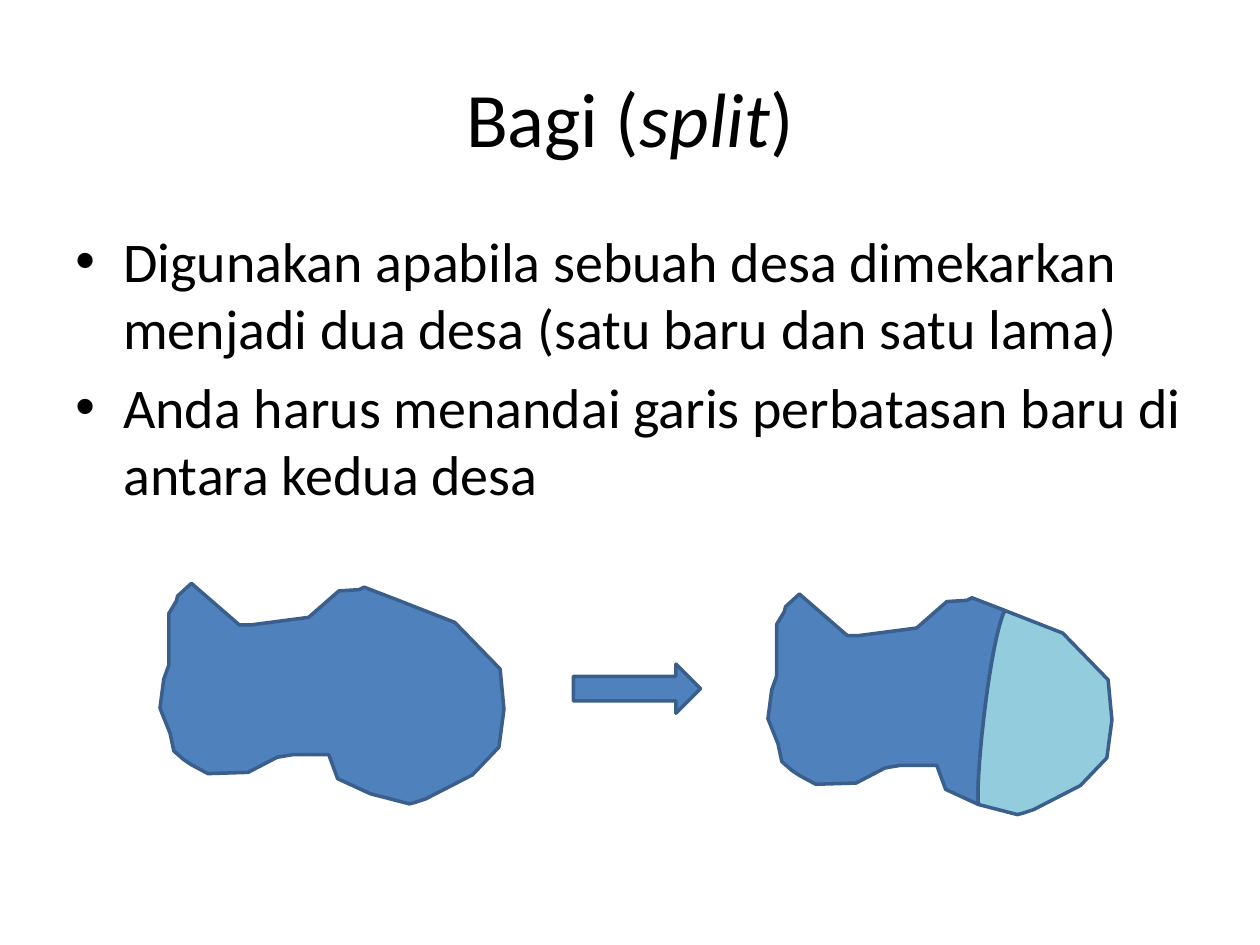
from typing import NamedTuple

from lxml import etree
from pptx import Presentation
from pptx.dml.color import RGBColor
from pptx.enum.shapes import MSO_SHAPE
from pptx.enum.text import MSO_ANCHOR, PP_ALIGN
from pptx.oxml.ns import qn
from pptx.util import Inches, Pt

RIGHT_ARROW = MSO_SHAPE.RIGHT_ARROW
MIDDLE, TOP = MSO_ANCHOR.MIDDLE, MSO_ANCHOR.TOP
CENTER, LEFT = PP_ALIGN.CENTER, PP_ALIGN.LEFT

SLIDE_WIDTH, SLIDE_HEIGHT = Inches(10), Inches(7.5)
COLUMNS, ROWS = 100, 75
FONT = "Calibri"
BLACK, BLUE, TEAL, OUTLINE = "000000", "4F81BD", "93CDDD", "3A5F8C"


class Point(NamedTuple):
    col: float
    row: float


class Frame(NamedTuple):
    col: float
    row: float
    cols: float
    rows: float


class Phrase(NamedTuple):
    text: str
    italic: bool = False


class Line(NamedTuple):
    phrases: list[Phrase]
    size: float
    align: PP_ALIGN = LEFT
    bullet: bool = False


TITLE_FRAME = Frame(5, 3, 90, 12.5)
BODY_FRAME = Frame(5, 17.5, 90, 49.5)
ARROW_FRAME = Frame(45.5, 52.7, 10.1, 3.9)

TITLE = [Line([Phrase("Bagi ("), Phrase("split", True), Phrase(")")], 44, CENTER)]
BODY = [
    Line([Phrase(text)], 32, bullet=True)
    for text in (
        "Digunakan apabila sebuah desa dimekarkan menjadi dua desa "
        "(satu baru dan satu lama)",
        "Anda harus menandai garis perbatasan baru di antara kedua desa",
    )
]

# Village outline, clockwise: west side from border foot to border head, then east side
WEST_SIDE = [Point(*p) for p in (
    (29.4, 63), (26.8, 61.8), (26.1, 59.9), (23.2, 59.9), (22, 60.1),
    (19.7, 61.3), (16.5, 61.4), (15.2, 60.7), (14.6, 60.3), (13.8, 59.6),
    (13.5, 58.2), (12.7, 56.2), (13, 53.9), (13.4, 52.8), (13.4, 48.7),
    (14, 47.7), (14.1, 47.3), (15.2, 46.3), (19, 49.6), (19.9, 49.6),
    (24.5, 49), (26.9, 46.9), (28.5, 46.8), (28.9, 46.6), (31.5, 47.6),
)]
EAST_SIDE = [Point(*p) for p in (
    (36.1, 49.4), (39.7, 53.1), (40, 56.3), (39.6, 59.3), (37.5, 61.5),
    (33.8, 63.4), (32.9, 63.7), (32.5, 63.8),
)]
BORDER_CONTROLS = (Point(30.4, 49.8), Point(29.2, 60.2))
SPLIT_SHIFT = Point(48.25, 0.85)


def x(cols: float) -> int:
    return round(SLIDE_WIDTH * cols / COLUMNS)


def y(rows: float) -> int:
    return round(SLIDE_HEIGHT * rows / ROWS)


def place(frame: Frame) -> tuple[int, int, int, int]:
    return x(frame.col), y(frame.row), x(frame.cols), y(frame.rows)


def color(hex_value: str) -> RGBColor:
    return RGBColor.from_string(hex_value)


def bezier(start: Point, first: Point, second: Point, end: Point,
           steps: int = 16) -> list[Point]:
    """Return points along a cubic curve, both ends included."""
    def blend(a: float, b: float, c: float, d: float, t: float) -> float:
        u = 1 - t
        return u**3 * a + 3 * u**2 * t * b + 3 * u * t**2 * c + t**3 * d

    return [
        Point(*(blend(*axis, i / steps) for axis in zip(start, first, second, end)))
        for i in range(steps + 1)
    ]


def paint(shape, fill: str) -> None:
    shape.shadow.inherit = False
    shape.fill.solid()
    shape.fill.fore_color.rgb = color(fill)
    shape.line.color.rgb = color(OUTLINE)
    shape.line.width = Pt(2)


def add_area(slide, points: list[Point], fill: str,
             shift: Point = Point(0, 0)) -> None:
    corners = [(x(p.col + shift.col), y(p.row + shift.row)) for p in points]
    builder = slide.shapes.build_freeform(*corners[0])
    builder.add_line_segments(corners[1:], close=True)
    paint(builder.convert_to_shape(), fill)


def add_bullet(paragraph) -> None:
    properties = paragraph._p.get_or_add_pPr()
    properties.set("marL", str(Inches(0.38)))
    properties.set("indent", str(-Inches(0.38)))
    etree.SubElement(properties, qn("a:buFont"), typeface="Arial")
    etree.SubElement(properties, qn("a:buChar"), char="•")


def add_text(slide, frame: Frame, lines: list[Line], anchor: MSO_ANCHOR) -> None:
    text_frame = slide.shapes.add_textbox(*place(frame)).text_frame
    text_frame.word_wrap = True
    text_frame.vertical_anchor = anchor
    for index, line in enumerate(lines):
        paragraph = text_frame.add_paragraph() if index else text_frame.paragraphs[0]
        paragraph.alignment = line.align
        if line.bullet:
            paragraph.space_before = Pt(line.size * 0.2)
            add_bullet(paragraph)
        for phrase in line.phrases:
            run = paragraph.add_run()
            run.text = phrase.text
            run.font.name = FONT
            run.font.size = Pt(line.size)
            run.font.italic = phrase.italic
            run.font.color.rgb = color(BLACK)


def main() -> None:
    presentation = Presentation()
    presentation.slide_width = SLIDE_WIDTH
    presentation.slide_height = SLIDE_HEIGHT
    slide = presentation.slides.add_slide(presentation.slide_layouts[6])

    # Heading and explanation
    add_text(slide, TITLE_FRAME, TITLE, MIDDLE)
    add_text(slide, BODY_FRAME, BODY, TOP)

    # Whole village, then the old and new villages along a shared border
    border = bezier(WEST_SIDE[-1], *BORDER_CONTROLS, WEST_SIDE[0])
    add_area(slide, WEST_SIDE + EAST_SIDE, BLUE)
    add_area(slide, WEST_SIDE + border[1:-1], BLUE, SPLIT_SHIFT)
    add_area(slide, border[::-1] + EAST_SIDE, TEAL, SPLIT_SHIFT)

    # Arrow from the whole village to the split one
    paint(slide.shapes.add_shape(RIGHT_ARROW, *place(ARROW_FRAME)), BLUE)

    presentation.save("out.pptx")


if __name__ == "__main__":
    main()
